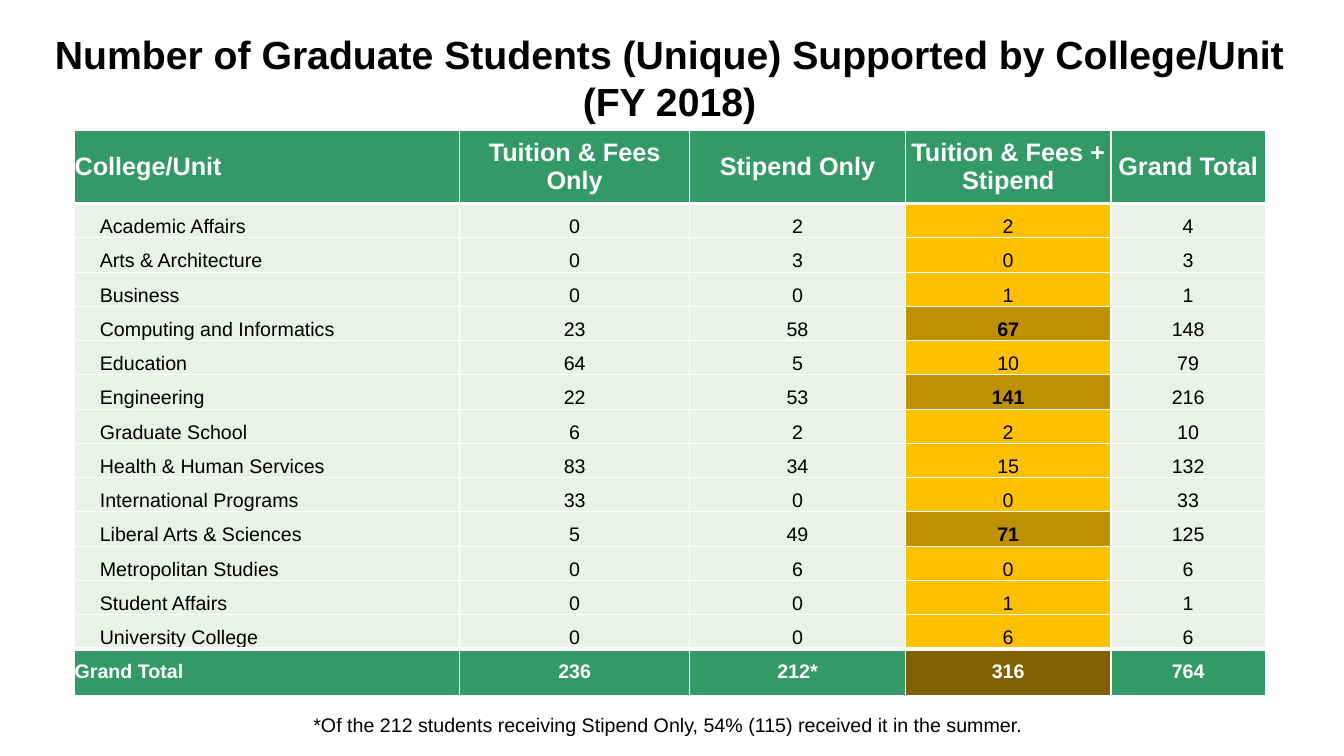
from lxml import etree
from pptx import Presentation
from pptx.dml.color import RGBColor
from pptx.enum.text import MSO_ANCHOR, MSO_AUTO_SIZE, PP_ALIGN
from pptx.oxml.ns import qn
from pptx.util import Inches, Pt

LEFT, CENTER = PP_ALIGN.LEFT, PP_ALIGN.CENTER
MIDDLE, BOTTOM = MSO_ANCHOR.MIDDLE, MSO_ANCHOR.BOTTOM
FIT_SHAPE = MSO_AUTO_SIZE.SHAPE_TO_FIT_TEXT

COLORS = {
    "white": "FFFFFF", "black": "000000", "green": "339966", "pale": "EBF1E9",
    "gold": "FFC000", "dark_gold": "BF9000", "brown": "806000",
}
HEADERS = ["College/Unit", "Tuition & Fees Only", "Stipend Only",
           "Tuition & Fees + Stipend", "Grand Total"]
UNITS = [
    ("Academic Affairs", 0, 2, 2, 4),
    ("Arts & Architecture", 0, 3, 0, 3),
    ("Business", 0, 0, 1, 1),
    ("Computing and Informatics", 23, 58, 67, 148),
    ("Education", 64, 5, 10, 79),
    ("Engineering", 22, 53, 141, 216),
    ("Graduate School", 6, 2, 2, 10),
    ("Health & Human Services", 83, 34, 15, 132),
    ("International Programs", 33, 0, 0, 33),
    ("Liberal Arts & Sciences", 5, 49, 71, 125),
    ("Metropolitan Studies", 0, 6, 0, 6),
    ("Student Affairs", 0, 0, 1, 1),
    ("University College", 0, 0, 6, 6),
]
TOTALS = ["Grand Total", "236", "212*", "316", "764"]
COL_WIDTHS = [3.82, 2.28, 2.14, 2.04, 1.53]
ROW_HEIGHTS = [0.73] + [0.34] * len(UNITS) + [0.46]
FULL_SUPPORT_COL = 3
HIGHLIGHT_MIN = 50


def write(tf, text, size=14, color="black", bold=False, align=LEFT, indent=0):
    for i, line in enumerate(text.split("\n")):
        p = tf.add_paragraph() if i else tf.paragraphs[0]
        p.alignment = align
        if indent:
            pPr = p._p.get_or_add_pPr()
            pPr.set("marL", "0")
            pPr.set("indent", str(Inches(indent)))
        r = p.add_run()
        r.text = line
        r.font.name = "Arial"
        r.font.size = Pt(size)
        r.font.bold = bold
        r.font.color.rgb = RGBColor.from_string(COLORS[color])


class SlideBuilder:
    def __init__(self, slide):
        self.s = slide

    def text(self, x, y, w, h, text, **style):
        sp = self.s.shapes.add_textbox(Inches(x), Inches(y), Inches(w), Inches(h))
        tf = sp.text_frame
        tf.word_wrap = False
        tf.auto_size = FIT_SHAPE
        write(tf, text, **style)

    def table(self, x, y, widths, heights):
        frame = self.s.shapes.add_table(
            len(heights), len(widths), Inches(x), Inches(y),
            Inches(sum(widths)), Inches(sum(heights)))
        table = frame.table
        table.horz_banding = False
        for col, width in zip(table.columns, widths):
            col.width = Inches(width)
        for row, height in zip(table.rows, heights):
            row.height = Inches(height)
        return table

    def cell(self, cell, text, fill, anchor, top=1, bottom=1, **style):
        cell.margin_left = cell.margin_right = 0
        cell.margin_top = cell.margin_bottom = 0
        cell.vertical_anchor = anchor
        cell.fill.solid()
        cell.fill.fore_color.rgb = RGBColor.from_string(COLORS[fill])
        self.borders(cell, {"L": 1, "R": 1, "T": top, "B": bottom})
        write(cell.text_frame, text, **style)

    def borders(self, cell, edges):
        tcPr = cell._tc.get_or_add_tcPr()
        for i, (side, width) in enumerate(edges.items()):
            ln = etree.Element(qn("a:ln" + side), w=str(Pt(width)))
            fill = etree.SubElement(ln, qn("a:solidFill"))
            etree.SubElement(fill, qn("a:srgbClr"), val=COLORS["white"])
            tcPr.insert(i, ln)


def main():
    prs = Presentation()
    prs.slide_width, prs.slide_height = Inches(13.33), Inches(7.5)
    b = SlideBuilder(prs.slides.add_slide(prs.slide_layouts[6]))

    table = b.table(0.74, 1.29, COL_WIDTHS, ROW_HEIGHTS)
    last = len(UNITS) + 1
    for c, (header, total) in enumerate(zip(HEADERS, TOTALS)):
        align = CENTER if c else LEFT
        full = c == FULL_SUPPORT_COL
        b.cell(table.cell(0, c), header, "green", MIDDLE, bottom=3,
               size=18, color="white", bold=True, align=align)
        for r, unit in enumerate(UNITS, 1):
            strong = full and unit[c] > HIGHLIGHT_MIN
            fill = "dark_gold" if strong else "gold" if full else "pale"
            b.cell(table.cell(r, c), str(unit[c]), fill, BOTTOM,
                   top=3 if r == 1 else 1, bottom=3 if r == last - 1 else 1,
                   bold=strong, align=align, indent=0 if c else 0.25)
        b.cell(table.cell(last, c), total, "brown" if full else "green", MIDDLE,
               top=3, color="white", bold=True, align=align)

    b.text(0.37, 0.25, 12.54, 1.04,
           "Number of Graduate Students (Unique) Supported by College/Unit\n(FY 2018)",
           size=28, bold=True, align=CENTER)
    b.text(3.01, 7.02, 7.27, 0.34,
           "*Of the 212 students receiving Stipend Only, 54% (115) received it in the summer.")
    prs.save("out.pptx")


if __name__ == "__main__":
    main()
